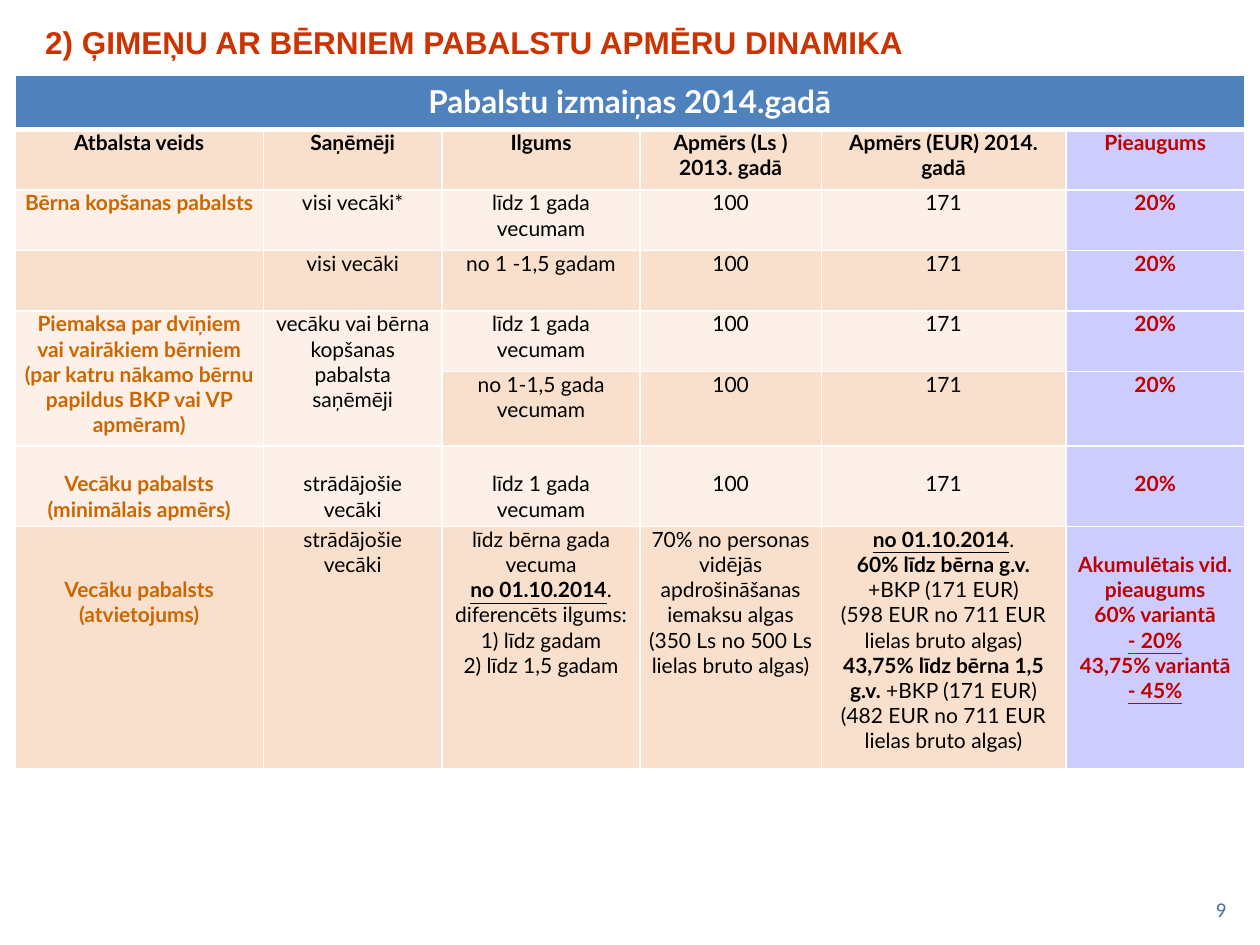
from lxml.etree import SubElement
from pptx import Presentation
from pptx.dml.color import RGBColor
from pptx.enum.text import MSO_ANCHOR, PP_ALIGN
from pptx.oxml.ns import qn
from pptx.util import Inches, Pt

SLIDE_WIDTH = Inches(10)
SLIDE_HEIGHT = Inches(7.5)

WHITE = RGBColor(0xFF, 0xFF, 0xFF)
BLACK = RGBColor(0x00, 0x00, 0x00)
TITLE_RED = RGBColor(0xCC, 0x33, 0x00)
NUMBER_BLUE = RGBColor(0x46, 0x72, 0xA7)
BANNER_BLUE = RGBColor(0x4F, 0x81, 0xBD)
DARK_BAND = RGBColor(0xF9, 0xE0, 0xCD)
LIGHT_BAND = RGBColor(0xFC, 0xF0, 0xE8)
GROWTH_LILAC = RGBColor(0xCC, 0xCC, 0xFF)
GROWTH_RED = RGBColor(0xC0, 0x00, 0x00)
BENEFIT_ORANGE = RGBColor(0xCC, 0x66, 0x00)

COLUMN_PERCENTS = [19.7, 14.2, 15.7, 14.4, 19.4, 14.2]
ROW_PERCENTS = [5.73, 6.4, 6.4, 6.4, 6.4, 7.87, 8.53, 25.6]
LAST_COLUMN = len(COLUMN_PERCENTS) - 1
LINE_HEIGHT = Inches(0.2)

BANNER = "Pabalstu izmaiņas 2014.gadā"
HEADINGS = ["Atbalsta veids", "Saņēmēji", "Ilgums", "Apmērs (Ls ) 2013. gadā",
            "Apmērs (EUR) 2014. gadā", "Pieaugums"]
AMOUNTS = ["100", "171", "20%"]
UNTIL_ONE = "līdz 1 gada vecumam"
WORKING_PARENTS = "strādājošie vecāki"
START_DATE = ("no 01.10.2014", "bu")
EXTRA = (" +BKP (171 EUR)", "")

ROWS = [
    HEADINGS,
    ["Bērna kopšanas pabalsts", "visi vecāki*", UNTIL_ONE, *AMOUNTS],
    ["", "visi vecāki", "no 1 -1,5 gadam", *AMOUNTS],
    [["Piemaksa par dvīņiem vai vairākiem bērniem",
      "(par katru nākamo bērnu papildus BKP vai VP apmēram)"],
     "vecāku vai bērna kopšanas pabalsta saņēmēji", UNTIL_ONE, *AMOUNTS],
    ["", "", "no 1-1,5 gada vecumam", *AMOUNTS],
    ["Vecāku pabalsts (minimālais apmērs)", WORKING_PARENTS, UNTIL_ONE, *AMOUNTS],
    ["Vecāku pabalsts (atvietojums)", WORKING_PARENTS,
     ["līdz bērna gada vecuma",
      [START_DATE, (". diferencēts ilgums: 1) līdz gadam", "")],
      "2) līdz 1,5 gadam"],
     ["70% no personas vidējās apdrošināšanas iemaksu algas",
      "(350 Ls no 500 Ls lielas bruto algas)"],
     [[START_DATE, (".", "")],
      [("60% līdz bērna g.v.", "b"), EXTRA],
      "(598 EUR no 711 EUR lielas bruto algas)",
      [("43,75% līdz bērna 1,5 g.v.", "b"), EXTRA],
      "(482 EUR no 711 EUR lielas bruto algas)"],
     ["Akumulētais vid. pieaugums", "60% variantā", [("- 20%", "bu")],
      "43,75% variantā", [("- 45%", "bu")]]],
]
MINIMUM_ROW, REPLACEMENT_ROW = 6, 7
LOWERED_LINES = {(MINIMUM_ROW, column): 1 for column in range(LAST_COLUMN + 1)}
LOWERED_LINES |= {(REPLACEMENT_ROW, 0): 2, (REPLACEMENT_ROW, LAST_COLUMN): 1}


def across(percent):
    return round(SLIDE_WIDTH * percent / 100)


def down(percent):
    return round(SLIDE_HEIGHT * percent / 100)


def style_font(font, name, size, color, bold=False, underline=False):
    font.name = name
    font.size = Pt(size)
    font.color.rgb = color
    font.bold = bold
    font.underline = underline


def add_label(slide, text, left, top, width, height, alignment, font_style):
    shape = slide.shapes.add_textbox(across(left), down(top), across(width), down(height))
    text_frame = shape.text_frame
    text_frame.word_wrap = True
    text_frame.vertical_anchor = MSO_ANCHOR.MIDDLE
    text_frame.text = text
    paragraph = text_frame.paragraphs[0]
    paragraph.alignment = alignment
    style_font(paragraph.runs[0].font, *font_style)


def set_borders(cell, top=1, bottom=1):
    properties = cell._tc.get_or_add_tcPr()
    for side, points in (("L", 1), ("R", 1), ("T", top), ("B", bottom)):
        line = SubElement(properties, qn(f"a:ln{side}"), w=str(Pt(points)))
        fill = SubElement(line, qn("a:solidFill"))
        SubElement(fill, qn("a:srgbClr"), val=str(WHITE))


def paint_cell(cell, color):
    cell.fill.solid()
    cell.fill.fore_color.rgb = color


def write_cell(cell, content, size, color, bold):
    paragraphs = content if isinstance(content, list) else [content]
    base = "b" if bold else ""
    for index, pieces in enumerate(paragraphs):
        text_frame = cell.text_frame
        paragraph = text_frame.add_paragraph() if index else text_frame.paragraphs[0]
        paragraph.alignment = PP_ALIGN.CENTER
        paragraph.font.size = Pt(size)
        if isinstance(pieces, str):
            pieces = [(pieces, base)] if pieces else []
        for text, marks in pieces:
            run = paragraph.add_run()
            run.text = text
            style_font(run.font, "Lato", size, color, "b" in marks, "u" in marks)


def text_color(row, column):
    if column == LAST_COLUMN:
        return GROWTH_RED
    return BENEFIT_ORANGE if column == 0 and row > 1 else BLACK


def add_banner(table):
    for cell in table.rows[0].cells:
        set_borders(cell, bottom=3)
        paint_cell(cell, BANNER_BLUE)
    table.cell(0, 0).merge(table.cell(0, LAST_COLUMN))
    write_cell(table.cell(0, 0), BANNER, 18, WHITE, True)


def add_body_cell(table, row, column, content):
    cell = table.cell(row, column)
    cell.margin_left = cell.margin_right = Inches(0.07)
    cell.margin_top = LINE_HEIGHT * LOWERED_LINES.get((row, column), 0)
    cell.margin_bottom = 0
    set_borders(cell, top=3 if row == 1 else 1)
    band = DARK_BAND if row % 2 else LIGHT_BAND
    paint_cell(cell, GROWTH_LILAC if column == LAST_COLUMN else band)
    bold = row == 1 or column in (0, LAST_COLUMN)
    write_cell(cell, content, 12, text_color(row, column), bold)


def add_benefit_table(slide):
    shape = slide.shapes.add_table(
        len(ROW_PERCENTS), len(COLUMN_PERCENTS), across(1.2), down(8),
        across(sum(COLUMN_PERCENTS)), down(sum(ROW_PERCENTS)))
    table = shape.table
    for column, percent in zip(table.columns, COLUMN_PERCENTS):
        column.width = across(percent)
    for row, percent in zip(table.rows, ROW_PERCENTS):
        row.height = down(percent)
    add_banner(table)
    for row, contents in enumerate(ROWS, start=1):
        for column, content in enumerate(contents):
            add_body_cell(table, row, column, content)
    for column in (0, 1):
        table.cell(4, column).merge(table.cell(5, column))


def main():
    presentation = Presentation()
    presentation.slide_width = SLIDE_WIDTH
    presentation.slide_height = SLIDE_HEIGHT
    slide = presentation.slides.add_slide(presentation.slide_layouts[6])
    add_label(slide, "9", 90, 94.4, 8.3, 3.6, PP_ALIGN.RIGHT,
              ("Calibri", 12, NUMBER_BLUE))
    add_label(slide, "2) ĢIMEŅU AR BĒRNIEM PABALSTU APMĒRU DINAMIKA",
              2.6, 1.73, 94.8, 5.33, PP_ALIGN.JUSTIFY, ("Arial", 18, TITLE_RED, True))
    add_benefit_table(slide)
    presentation.save("out.pptx")


if __name__ == "__main__":
    main()
